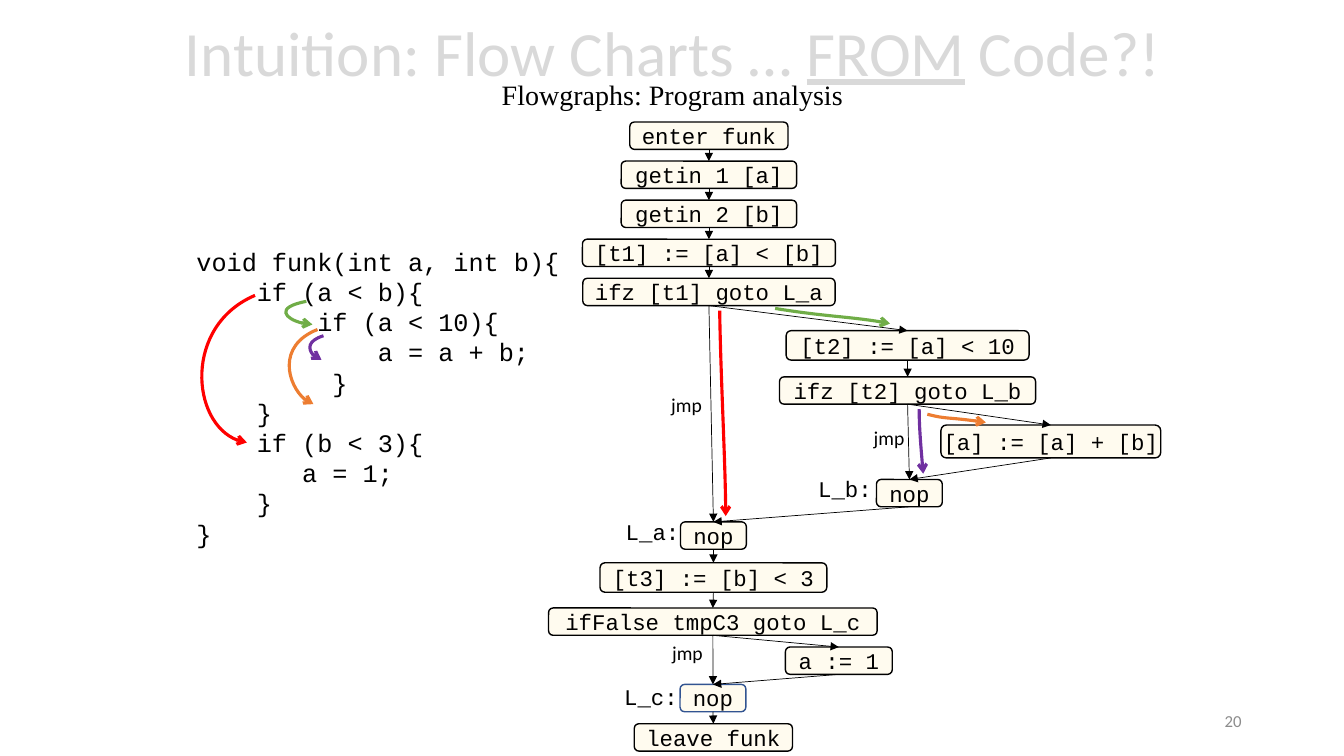
import pptx
import pptx.util
import pptx.dml.color
import pptx.enum.shapes
import pptx.enum.text
from dataclasses import dataclass
from lxml import etree
from pptx.oxml.ns import qn

Pt = pptx.util.Pt
ALIGN = pptx.enum.text.PP_ALIGN
ANCHOR = pptx.enum.text.MSO_ANCHOR
MONO, SANS, SERIF = "Courier New", "Calibri", "Times New Roman"
BLACK, CREAM = "000000", "FFF2CC"
STEPS = 40  # samples that find a curve's bounds


@dataclass
class Node:
    key: str
    text: str
    mid: float
    top: float
    width: float
    height: float = 19.5
    edge: str = BLACK


@dataclass
class Label:
    text: str
    left: float
    top: float
    width: float
    height: float
    font: str
    size: float


@dataclass
class Curve:
    color: str
    points: tuple  # start, two handles, end


# Flowgraph boxes: the entry column has an even pitch
ENTRY = [("enter", "enter funk", 113), ("in1", "getin 1 [a]", 125.3),
         ("in2", "getin 2 [b]", 125.3), ("t1", "[t1] := [a] < [b]", 180.7),
         ("if1", "ifz [t1] goto L_a", 180.2)]
NODES = [Node(key, text, 506.4, 87.2 + 27.9 * i, width)
         for i, (key, text, width) in enumerate(ENTRY)]
NODES += [
    Node("t2", "[t2] := [a] < 10", 648.3, 236.2, 173.5, 21),
    Node("if2", "ifz [t2] goto L_b", 648.3, 269.2, 182.9),
    Node("add", "[a] := [a] + [b]", 750.6, 303.6, 157, 23.5),
    Node("nopb", "nop", 649.6, 342.5, 47),
    Node("nopa", "nop", 509.6, 372.8, 47),
    Node("t3", "[t3] := [b] < 3", 509.6, 402, 162, 21),
    Node("if3", "ifFalse tmpC3 goto L_c", 509.2, 434.3, 234.7),
    Node("set", "a := 1", 599.2, 462.2, 76.3),
    Node("nopc", "nop", 509.3, 488.9, 47, edge="325491"),
    Node("leave", "leave funk", 509.6, 517, 113),
]
LINKS = ["enter in1", "in1 in2", "in2 t1", "t1 if1", "if1 t2", "if1 nopa",
         "t2 if2", "if2 add", "if2 nopb", "add nopb", "nopb nopa", "nopa t3",
         "t3 if3", "if3 nopc", "if3 set", "set nopc", "nopc leave"]
LABELS = [
    Label("L_a:", 439.9, 366.5, 53, 26.5, MONO, 16),
    Label("L_b:", 577.4, 336, 53, 26.5, MONO, 16),
    Label("L_c:", 438.8, 484.6, 53, 26.5, MONO, 16),
    Label("jmp", 472.3, 277.2, 36.7, 24.2, SANS, 14),
    Label("jmp", 617, 301, 36.7, 24.2, SANS, 14),
    Label("jmp", 473, 454.6, 36.7, 24.2, SANS, 14),
]
# Source lines: indent in characters, then text
CODE = [(0, "void funk(int a, int b){"), (4, "if (a < b){"),
        (8, "if (a < 10){"), (12, "a = a + b;"), (9, "}"), (4, "}"),
        (4, "if (b < 3){"), (7, "a = 1;"), (4, "}"), (0, "}")]
RED, GREEN, ORANGE, PURPLE = "FF0000", "70AD47", "ED7D31", "7030A0"
CURVES = [
    Curve(RED, ((182.2, 211), (131, 232.6), (136.8, 311), (176.4, 316.1))),
    Curve(GREEN, ((218.9, 215.3), (195.8, 219.6), (205.9, 231.1), (223.2, 231.8))),
    Curve(ORANGE, ((226.8, 235.4), (197.3, 247), (207.4, 284.4), (223.9, 288.7))),
    Curve(PURPLE, ((231.1, 239.8), (219.6, 243.4), (218.9, 254.2), (229.7, 257))),
    Curve(PURPLE, ((656.6, 292.3), (656.6, 304.6), (658.1, 322.6), (659.5, 338.4))),
    Curve(ORANGE, ((662.4, 295.9), (676.8, 299.5), (674.6, 297.4), (704.2, 301.7))),
    Curve(RED, ((514.1, 221.8), (514.8, 267.8), (518.4, 334.1), (518.4, 368.6))),
    Curve(GREEN, ((553.7, 220.3), (589, 226.1), (609.8, 226.1), (635.8, 231.1))),
]


def tint(target, color: str) -> None:
    """Set a font colour, a fill's fore colour or a line colour."""
    target.rgb = pptx.dml.color.RGBColor.from_string(color)


def write(para, text: str, *, font: str = MONO, size: float = 16,
          color: str = BLACK, line: bool = False, align=ALIGN.LEFT) -> None:
    para.alignment = align
    run = para.add_run()
    run.text = text
    run.font.name, run.font.size = font, Pt(size)
    run.font.underline = line or None
    tint(run.font.color, color)


def frame(slide, left: float, top: float, width: float, height: float,
          wrap: bool = False, anchor=ANCHOR.TOP):
    box = slide.shapes.add_textbox(Pt(left), Pt(top), Pt(width), Pt(height))
    box.text_frame.word_wrap = wrap
    box.text_frame.vertical_anchor = anchor
    return box.text_frame


def stroke(shape, color: str, width: float, head: str = "") -> None:
    tint(shape.line.color, color)
    shape.line.width = Pt(width)
    if head:
        etree.SubElement(shape.line._get_or_add_ln(), qn("a:tailEnd"), type=head)


def block(slide, node: Node):
    shape = slide.shapes.add_shape(
        pptx.enum.shapes.MSO_SHAPE.ROUNDED_RECTANGLE,
        Pt(node.mid - node.width / 2), Pt(node.top), Pt(node.width), Pt(node.height))
    shape.shadow.inherit = False
    shape.fill.solid()
    tint(shape.fill.fore_color, CREAM)
    paint = shape._element.spPr.find(".//" + qn("a:srgbClr"))
    etree.SubElement(paint, qn("a:alpha"), val="30000")
    stroke(shape, node.edge, 1)
    text = shape.text_frame
    text.word_wrap = False
    text.vertical_anchor = ANCHOR.MIDDLE
    write(text.paragraphs[0], node.text, align=ALIGN.CENTER)
    return shape


def link(slide, start, end) -> None:
    line = slide.shapes.add_connector(
        pptx.enum.shapes.MSO_CONNECTOR.STRAIGHT, 0, 0, 0, 0)
    line.begin_connect(start, 2)
    line.end_connect(end, 0)
    stroke(line, BLACK, 0.5, "triangle")
    etree.SubElement(line._element.spPr, qn("a:effectLst"))


def bend(slide, curve: Curve) -> None:
    def spot(t: float) -> tuple:
        u = 1 - t
        parts = (u ** 3, 3 * u * u * t, 3 * u * t * t, t ** 3)
        return tuple(Pt(sum(p * c for p, c in zip(parts, axis)))
                     for axis in zip(*curve.points))

    # Samples fix the bounds, then one Bézier segment takes their place
    trail = [spot(i / STEPS) for i in range(STEPS + 1)]
    form = slide.shapes.build_freeform(*trail[0])
    form.add_line_segments(trail[1:], close=False)
    shape = form.convert_to_shape()
    route = shape._element.spPr.find(".//" + qn("a:path"))
    for step in route.findall(qn("a:lnTo")):
        route.remove(step)
    cubic = etree.SubElement(route, qn("a:cubicBezTo"))
    for x, y in curve.points[1:]:
        etree.SubElement(cubic, qn("a:pt"), x=str(Pt(x) - shape.left),
                         y=str(Pt(y) - shape.top))
    shape.shadow.inherit = False
    shape.fill.background()
    stroke(shape, curve.color, 2.25, "arrow")


def main() -> None:
    deck = pptx.Presentation()
    deck.slide_width, deck.slide_height = Pt(960), Pt(540)
    slide = deck.slides.add_slide(deck.slide_layouts[6])

    # Title and page number
    head = frame(slide, 120.3, -0.7, 720, 104.4, True, ANCHOR.MIDDLE)
    first = head.paragraphs[0]
    first.line_spacing = 0.7
    for text, line in [("Intuition: Flow Charts … ", False), ("FROM", True),
                       (" Code?!", False)]:
        write(first, text, font=SANS, size=45, color="D9D9D9", line=line,
              align=ALIGN.CENTER)
    first.add_line_break()
    write(first, "Flowgraphs: Program analysis", font=SERIF, size=20,
          align=ALIGN.CENTER)
    page = frame(slide, 678, 500.4, 216, 28.8, True, ANCHOR.MIDDLE)
    write(page.paragraphs[0], "20", font=SANS, size=12, color="8C8C8C",
          align=ALIGN.RIGHT)

    # Flowgraph
    blocks = {node.key: block(slide, node) for node in NODES}
    for pair in LINKS:
        start, end = pair.split()
        link(slide, blocks[start], blocks[end])
    for label in LABELS:
        text = frame(slide, label.left, label.top, label.width, label.height)
        write(text.paragraphs[0], label.text, font=label.font, size=label.size)

    # Source code, indented by the width of a character
    code = frame(slide, 133.2, 172.1, 275, 225.4)
    for i, (depth, text) in enumerate(CODE):
        para = code.add_paragraph() if i else code.paragraphs[0]
        write(para, text, size=18)
        para._p.get_or_add_pPr().set("marL", str(Pt(10.8 * depth)))

    # Coloured branch arrows
    for curve in CURVES:
        bend(slide, curve)

    deck.save("out.pptx")


if __name__ == "__main__":
    main()
